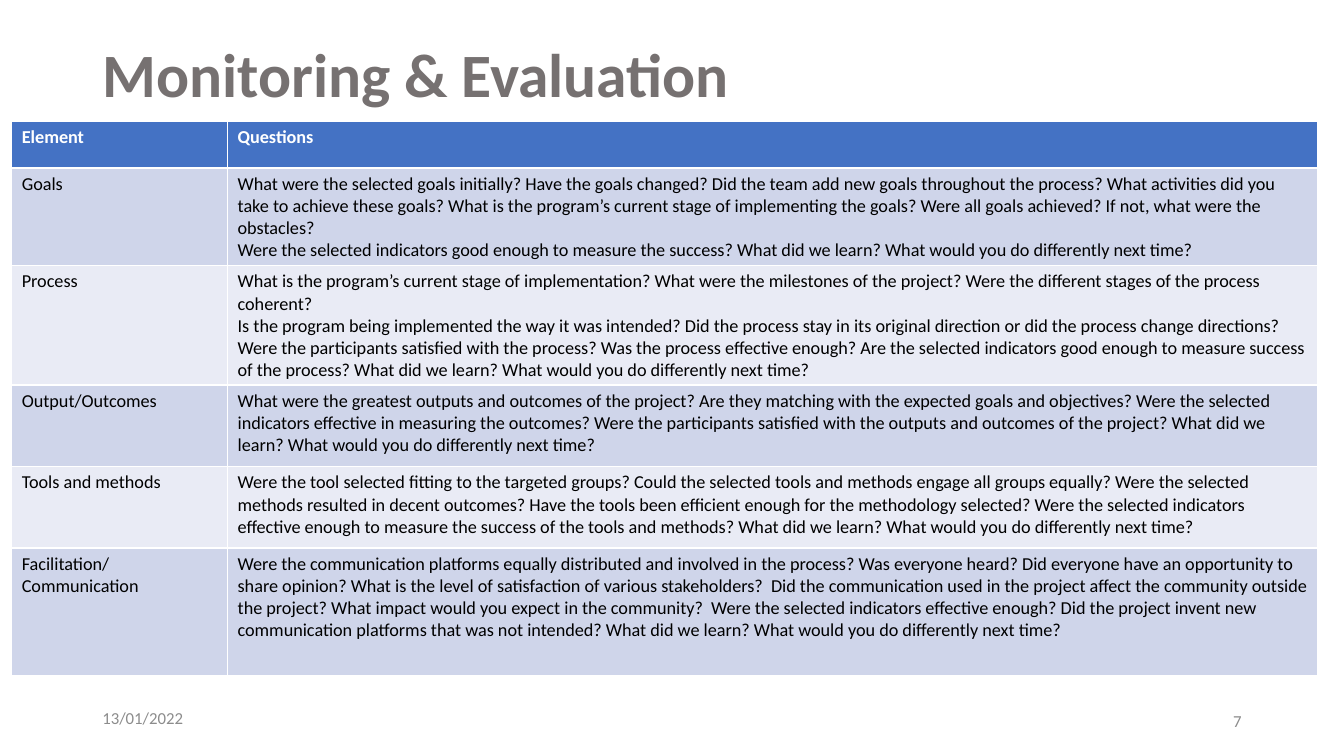
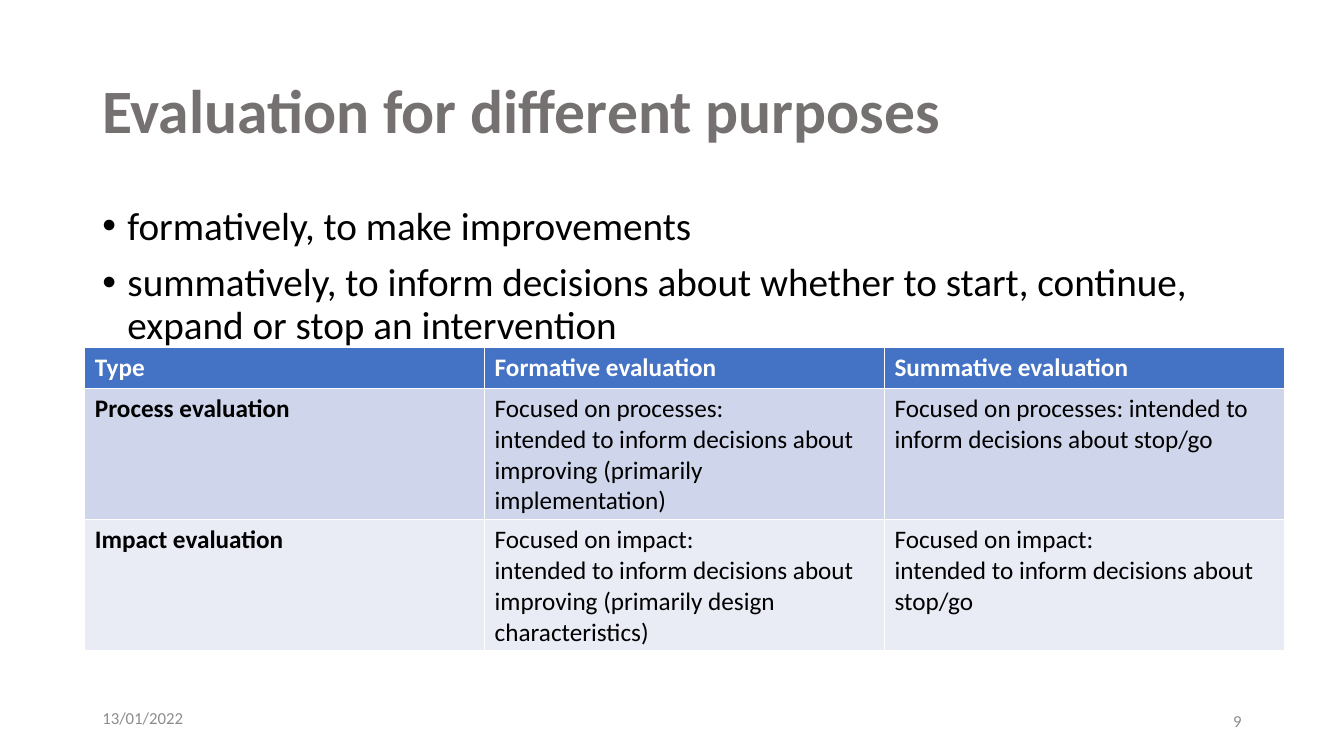
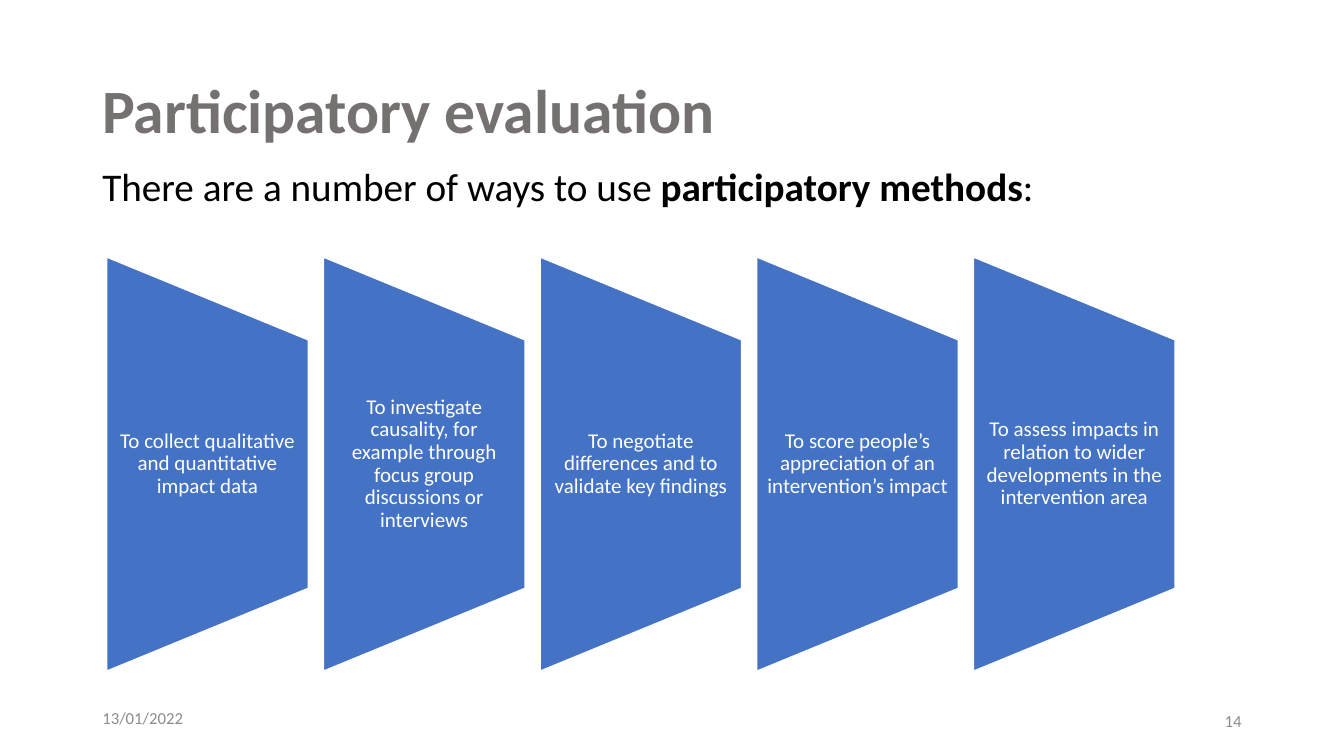
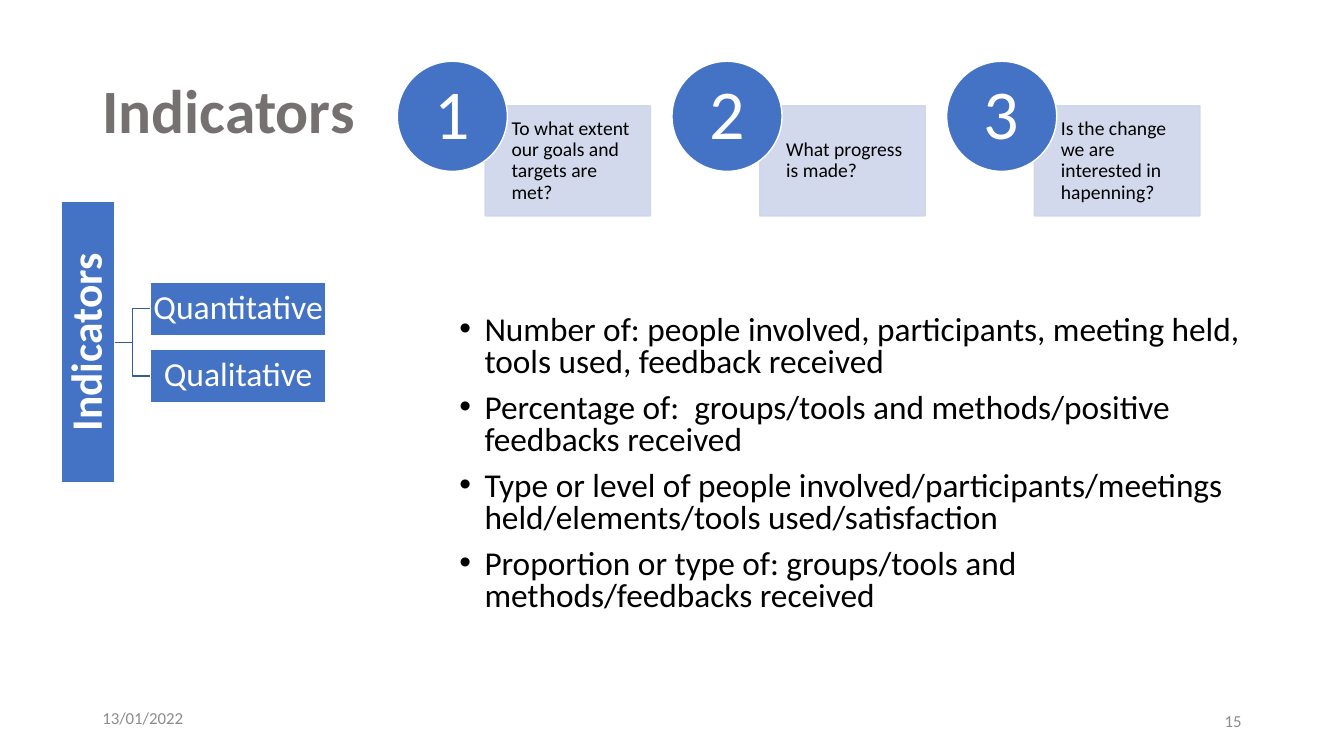
from typing import NamedTuple
from lxml.etree import SubElement
from pptx import Presentation
from pptx.dml.color import RGBColor as RGB
from pptx.enum.shapes import MSO_CONNECTOR as Link, MSO_SHAPE as Kind
from pptx.enum.text import MSO_ANCHOR as Anchor, PP_ALIGN as Align
from pptx.oxml.ns import qn
from pptx.util import Emu, Pt

# The slide is a grid of 160 columns by 90 rows of square cells.
COLS, ROWS, CELL = 160, 90, 76200


class Theme:
    font = "Calibri"
    blue, pale, light = "4472C4", "CFD5EA", "E9EBF5"
    white, black, gray, dim, edge = "FFFFFF", "000000", "767171", "8C8C8C", "365B9D"
    title, body, list, leaf, root, digit = 44, 28, 23.8, 24, 31, 50
    foot, step, note, dense, cell = 12, 15, 14, 13, 18


class Box(NamedTuple):
    x: float
    y: float
    w: float
    h: float

    def emu(self):
        return [cells(v) for v in self]


def cells(n):
    return Emu(round(n * CELL))


def write(frame, text, size, color, bold=False, align=Align.LEFT, line=None,
          anchor=Anchor.TOP, pad=None, gap=0, bullet=False):
    """Fill a frame, one paragraph a line; words between asterisks are bold."""
    frame.word_wrap = True
    frame.vertical_anchor = anchor
    if pad:
        (frame.margin_left, frame.margin_top,
         frame.margin_right, frame.margin_bottom) = map(cells, pad)
    for n, row in enumerate(text.split("\n")):
        para = frame.add_paragraph() if n else frame.paragraphs[0]
        if bullet:
            props = para._p.get_or_add_pPr()
            props.set("marL", str(3 * CELL))
            props.set("indent", str(-3 * CELL))
            SubElement(props, qn("a:buFont")).set("typeface", "Arial")
            SubElement(props, qn("a:buChar")).set("char", "•")
        para.alignment = align
        if line:
            para.line_spacing = line
        if n and gap:
            para.space_before = Pt(gap)
        for k, part in enumerate(row.split("*")):
            run = para.add_run()
            run.text = part
            font = run.font
            font.name, font.size = Theme.font, Pt(size)
            font.bold = bold or k % 2 == 1
            font.color.rgb = RGB.from_string(color)


def label(slide, box, text, size, color, **style):
    write(slide.shapes.add_textbox(*box.emu()).text_frame, text, size, color, **style)


def block(slide, kind, box, fill=Theme.blue, edge=Theme.white, alpha=None):
    shape = slide.shapes.add_shape(kind, *box.emu())
    shape.shadow.inherit = False
    shape.fill.solid()
    shape.fill.fore_color.rgb = RGB.from_string(fill)
    shape.line.color.rgb = RGB.from_string(edge)
    shape.line.width = Pt(1)
    if alpha:
        for tint in shape.element.spPr.iter(qn("a:srgbClr")):
            SubElement(tint, qn("a:alpha")).set("val", str(alpha * 1000))
    return shape


def base(deck, title, page, top=4.8):
    """Add a slide with its title, date and number."""
    slide = deck.slides.add_slide(deck.slide_layouts[6])
    label(slide, Box(11, 83, 36, 4.8), "13/01/2022", Theme.foot, Theme.dim,
          anchor=Anchor.MIDDLE)
    label(slide, Box(113, 83.4, 36, 4.8), str(page), Theme.foot, Theme.dim,
          align=Align.RIGHT, anchor=Anchor.MIDDLE)
    label(slide, Box(11, top, 138, 17.4), title, Theme.title, Theme.gray,
          bold=True, line=0.9, anchor=Anchor.MIDDLE)
    return slide


def grid(slide, x, y, wide, high, data, size):
    """Draw a table with a header row and banded body rows."""
    box = Box(x, y, sum(wide), sum(high))
    table = slide.shapes.add_table(len(high), len(wide), *box.emu()).table
    for col, w in zip(table.columns, wide):
        col.width = cells(w)
    for r, (row, h) in enumerate(zip(data, high)):
        table.rows[r].height = cells(h)
        band = Theme.pale if r % 2 else Theme.light
        for c, text in enumerate(row):
            cell = table.cell(r, c)
            cell.fill.solid()
            cell.fill.fore_color.rgb = RGB.from_string(band if r else Theme.blue)
            write(cell.text_frame, text, size, Theme.black if r else Theme.white,
                  bold=r == 0)


def steps(slide, box, texts):
    """Draw a row of tapered blocks, each narrowing to the right."""
    gap = 1.8
    w = (box.w - gap * (len(texts) - 1)) / len(texts)
    for n, text in enumerate(texts):
        x = box.x + n * (w + gap)
        # Turned a quarter, so width and height swap about the same centre.
        flat = Box(x + (w - box.h) / 2, box.y + (box.h - w) / 2, box.h, w)
        block(slide, Kind.FLOWCHART_MANUAL_OPERATION, flat).rotation = 270
        label(slide, Box(x, box.y + box.h / 5, w, box.h * 3 / 5), text,
              Theme.step, Theme.white, align=Align.CENTER, line=0.9,
              anchor=Anchor.MIDDLE, pad=(1.2, 0, 1.2, 0))


def tree(slide, box, root, leaves):
    """Draw an upright root bar joined to leaves stacked at its right."""
    thick, gap, reach = 6.35, 1.65, 4.25
    style = dict(align=Align.CENTER, line=0.9, anchor=Anchor.MIDDLE, pad=[0.25] * 4)
    bar = block(slide, Kind.RECTANGLE, Box(box.x, box.y, thick, box.h))
    write(bar.text_frame, root, Theme.root, Theme.white, bold=True, **style)
    bar.text_frame._txBody.bodyPr.set("vert", "vert270")
    x, pitch = box.x + thick + reach, thick + gap
    top = box.y + (box.h - pitch * len(leaves) + gap) / 2
    for n, text in enumerate(leaves):
        leaf = block(slide, Kind.RECTANGLE,
                     Box(x, top + n * pitch, box.w - thick - reach, thick))
        write(leaf.text_frame, text, Theme.leaf, Theme.white, **style)
        link = slide.shapes.add_connector(Link.ELBOW, 0, 0, 0, 0)
        link.begin_connect(bar, 3)
        link.end_connect(leaf, 1)
        link.line.color.rgb = RGB.from_string(Theme.edge)
        link.line.width = Pt(1)
        SubElement(link.element.spPr, qn("a:effectLst"))


def asks(slide, box, texts):
    """Draw numbered discs, each over the corner of its question card."""
    disc, w = 13.1, 19.7
    shift, drop = 10.45, box.h - disc
    pitch = (box.w - shift - w) / (len(texts) - 1)
    for n, text in enumerate(texts):
        x = box.x + n * pitch
        card = block(slide, Kind.RECTANGLE, Box(x + shift, box.y + drop, w, disc),
                     Theme.pale, Theme.pale, 90)
        write(card.text_frame, text, Theme.note, Theme.black, line=0.9,
              anchor=Anchor.MIDDLE, pad=(3.15, 1.3, 1.4, 1.3))
        dot = block(slide, Kind.OVAL, Box(x, box.y, disc, disc))
        write(dot.text_frame, str(n + 1), Theme.digit, Theme.white,
              align=Align.CENTER, line=0.9, anchor=Anchor.MIDDLE, pad=[0] * 4)


CHECKS = [
    ("Element", "Questions"),
    ("Goals",
     "What were the selected goals initially? Have the goals changed? Did the team add "
     "new goals throughout the process? What activities did you take to achieve these "
     "goals? What is the program’s current stage of implementing the goals? Were all "
     "goals achieved? If not, what were the obstacles?\n"
     "Were the selected indicators good enough to measure the success? What did we "
     "learn? What would you do differently next time?"),
    ("Process",
     "What is the program’s current stage of implementation? What were the milestones "
     "of the project? Were the different stages of the process coherent?\n"
     "Is the program being implemented the way it was intended? Did the process stay in "
     "its original direction or did the process change directions?\n"
     "Were the participants satisfied with the process? Was the process effective "
     "enough? Are the selected indicators good enough to measure success of the "
     "process? What did we learn? What would you do differently next time?"),
    ("Output/Outcomes",
     "What were the greatest outputs and outcomes of the project? Are they matching "
     "with the expected goals and objectives? Were the selected indicators effective in "
     "measuring the outcomes? Were the participants satisfied with the outputs and "
     "outcomes of the project? What did we learn? What would you do differently next "
     "time?"),
    ("Tools and methods",
     "Were the tool selected fitting to the targeted groups? Could the selected tools "
     "and methods engage all groups equally? Were the selected methods resulted in "
     "decent outcomes? Have the tools been efficient enough for the methodology "
     "selected? Were the selected indicators effective enough to measure the success of "
     "the tools and methods? What did we learn? What would you do differently next "
     "time?"),
    ("Facilitation/Communication",
     "Were the communication platforms equally distributed and involved in the process? "
     "Was everyone heard? Did everyone have an opportunity to share opinion? What is "
     "the level of satisfaction of various stakeholders?  Did the communication used in "
     "the project affect the community outside the project? What impact would you "
     "expect in the community?  Were the selected indicators effective enough? Did the "
     "project invent new communication platforms that was not intended? What did we "
     "learn? What would you do differently next time?"),
]
TYPES = [
    ("Type", "Formative evaluation", "Summative evaluation"),
    ("*Process evaluation*",
     "Focused on processes:\nintended to inform decisions about improving (primarily "
     "implementation)",
     "Focused on processes: intended to inform decisions about stop/go"),
    ("*Impact evaluation*",
     "Focused on impact:\nintended to inform decisions about improving (primarily "
     "design characteristics)",
     "Focused on impact:\nintended to inform decisions about stop/go"),
]
AIMS = ("formatively, to make improvements\n"
        "summatively, to inform decisions about whether to start, continue, expand or "
        "stop an intervention")
WAYS = [
    "To collect qualitative and quantitative impact data",
    "To investigate causality, for example through focus group discussions or interviews",
    "To negotiate differences and to validate key findings",
    "To score people’s appreciation of an intervention’s impact",
    "To assess impacts in relation to wider developments in the intervention area",
]
SIGNS = ("Number of: people involved, participants, meeting held, tools used, feedback "
         "received\n"
         "Percentage of:  groups/tools and methods/positive feedbacks received\n"
         "Type or level of people involved/participants/meetings held/elements/tools "
         "used/satisfaction\n"
         "Proportion or type of: groups/tools and methods/feedbacks received")
QUERIES = [
    "To what extent our goals and targets are met?",
    "What progress is made?",
    "Is the change we are interested in hapenning?",
]


def main():
    deck = Presentation()
    deck.slide_width, deck.slide_height = cells(COLS), cells(ROWS)

    slide = base(deck, "Monitoring & Evaluation", 7, top=0.5)
    grid(slide, 1.4, 14.4, [25.7, 129.8], [5.6, 9.7, 12, 9.7, 9.7, 15.2],
         CHECKS, Theme.dense)

    slide = base(deck, "Evaluation for different purposes", 9)
    label(slide, Box(11, 24, 138, 57), AIMS, Theme.body, Theme.black,
          line=0.9, gap=10, bullet=True)
    grid(slide, 10.1, 41.4, [47.6] * 3, [4.87] * 3, TYPES, Theme.cell)

    slide = base(deck, "Participatory evaluation", 14)
    label(slide, Box(11, 19.4, 138, 61.6),
          "There are a number of ways to use *participatory methods*:",
          Theme.body, Theme.black, line=0.9)
    steps(slide, Box(12.7, 30.6, 127.2, 49.3), WAYS)

    slide = base(deck, "Indicators", 15)
    tree(slide, Box(7.3, 24, 31.5, 33.5), "Indicators", ["Quantitative", "Qualitative"])
    asks(slide, Box(47.3, 7.3, 95.55, 18.4), QUERIES)
    label(slide, Box(53.5, 37, 97.3, 38.9), SIGNS, Theme.list, Theme.black,
          line=0.8, gap=10, bullet=True)

    deck.save("out.pptx")


if __name__ == "__main__":
    main()
